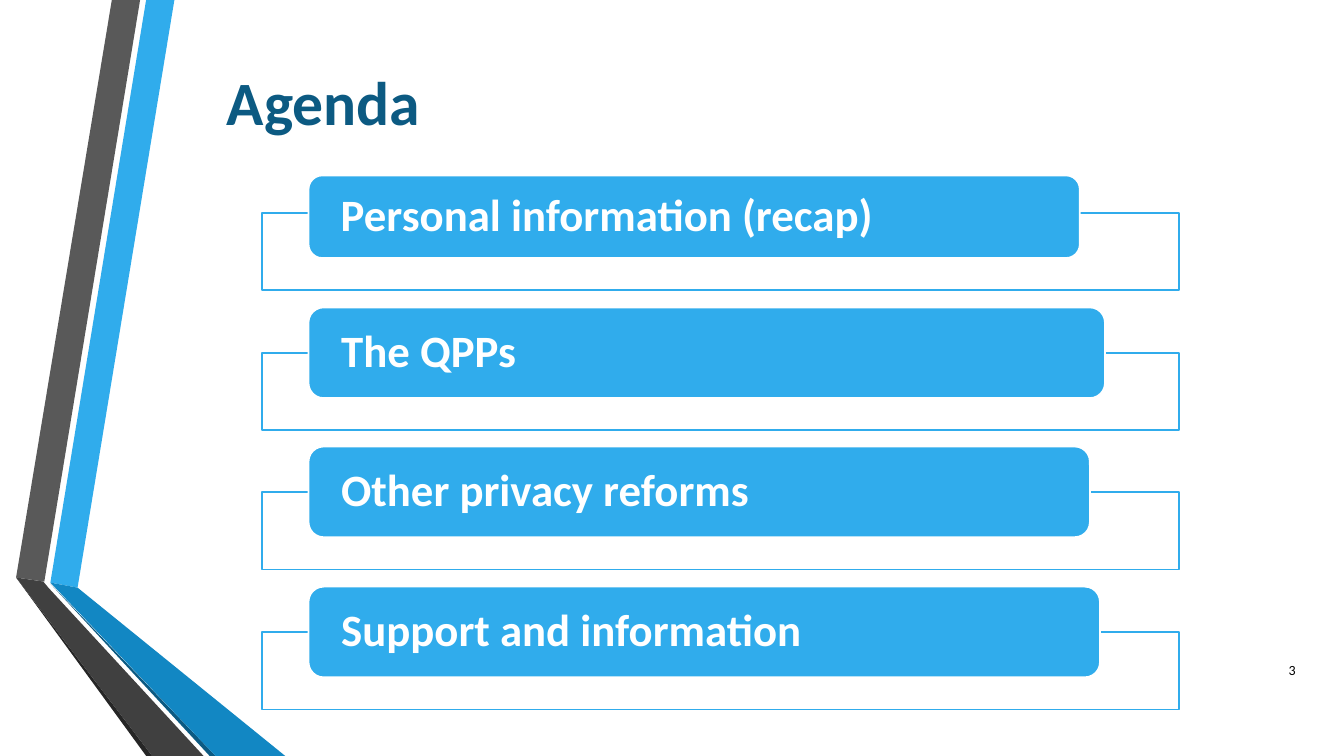
from lxml import etree
from pptx import Presentation
from pptx.dml.color import RGBColor
from pptx.enum.shapes import MSO_SHAPE
from pptx.enum.text import MSO_ANCHOR, PP_ALIGN
from pptx.oxml.ns import qn
from pptx.util import Pt

RECTANGLE = MSO_SHAPE.RECTANGLE
ROUNDED = MSO_SHAPE.ROUNDED_RECTANGLE
TOP, MIDDLE = MSO_ANCHOR.TOP, MSO_ANCHOR.MIDDLE
LEFT, RIGHT = PP_ALIGN.LEFT, PP_ALIGN.RIGHT

TITLE = "Agenda"
PAGE_NUMBER = "3"
AGENDA = [
    ("Personal information (recap)", 765, 82),
    ("The QPPs", 790, 90),
    ("Other privacy reforms", 775, 90),
    ("Support and information", 785, 90),
]
COLORS = {
    "white": "FFFFFF",
    "black": "000000",
    "blue": "30ACEC",
    "mid_blue": "1287C3",
    "dark_blue": "0C5A82",
    "gray": "595959",
    "dark_gray": "404040",
    "darkest_gray": "262626",
}
RIBBONS = [
    ("blue", [(50, 578), (77, 583), (173, 0), (145, 0)]),
    ("gray", [(139, 0), (111, 0), (16, 573), (44, 577)]),
    ("darkest_gray", [(16, 573), (145, 750), (151, 750)]),
    ("dark_blue", [(50, 579), (208, 750), (214, 750)]),
    ("mid_blue", [(50, 578), (214, 750), (283, 750), (77, 583)]),
    ("dark_gray", [(202, 750), (48, 583), (43, 577), (16, 573), (151, 750)]),
]
FONT = "Calibri"
PX = 9144
FRAME_LEFT, FRAME_TOP, FRAME_WIDTH, FRAME_HEIGHT = 260, 211, 909, 77
ROW_PITCH = 138.7
PILL_LEFT, PILL_OVERLAP, PILL_INSET = 306, 45, 28


def px(*lengths):
    return [round(length * PX) for length in lengths]


def rgb(name):
    return RGBColor.from_string(COLORS[name])


def paint(shape, fill, line=None):
    shape.shadow.inherit = False
    shape.fill.solid()
    shape.fill.fore_color.rgb = rgb(fill)
    if line:
        shape.line.color.rgb = rgb(line)
        shape.line.width = Pt(1.25)
    else:
        shape.line.fill.background()


def write(shape, text, size, color, alignment, anchor, bold=False):
    frame = shape.text_frame
    frame.word_wrap = True
    frame.vertical_anchor = anchor
    paragraph = frame.paragraphs[0]
    paragraph.text = text
    paragraph.alignment = alignment
    paragraph.line_spacing = 0.9
    font = paragraph.font
    font.name, font.size, font.bold = FONT, Pt(size), bold
    font.color.rgb = rgb(color)


def add_ribbon(slide, color, points):
    builder = slide.shapes.build_freeform(*points[0], scale=PX)
    builder.add_line_segments(points[1:], close=True)
    paint(builder.convert_to_shape(), color)


def add_agenda_row(slide, index, text, width, height):
    top = FRAME_TOP + round(index * ROW_PITCH)
    frame = slide.shapes.add_shape(
        RECTANGLE, *px(FRAME_LEFT, top, FRAME_WIDTH, FRAME_HEIGHT))
    paint(frame, "white", "blue")
    fill_color = frame.fill._xPr.find(qn("a:solidFill"))[0]
    etree.SubElement(fill_color, qn("a:alpha"), val="90000")

    pill_top = top + PILL_OVERLAP - height
    pill = slide.shapes.add_shape(
        ROUNDED, *px(PILL_LEFT, pill_top, width, height))
    paint(pill, "blue", "white")
    write(pill, text, 32, "white", LEFT, MIDDLE, bold=True)
    text_frame = pill.text_frame
    text_frame.margin_left, text_frame.margin_right = px(PILL_INSET, PILL_INSET)
    text_frame.margin_top = text_frame.margin_bottom = 0


def main():
    presentation = Presentation()
    presentation.slide_width, presentation.slide_height = px(1333, 750)
    slide = presentation.slides.add_slide(presentation.slide_layouts[5])

    for color, points in RIBBONS:
        add_ribbon(slide, color, points)

    title = slide.shapes.title
    title.left, title.top, title.width, title.height = px(215, 67, 239, 82)
    write(title, TITLE, 44, "dark_blue", LEFT, TOP, bold=True)

    number = slide.shapes.add_textbox(*px(1235, 646, 60, 40))
    write(number, PAGE_NUMBER, 10, "black", RIGHT, MIDDLE)

    for index, (text, width, height) in enumerate(AGENDA):
        add_agenda_row(slide, index, text, width, height)

    presentation.save("out.pptx")


if __name__ == "__main__":
    main()
